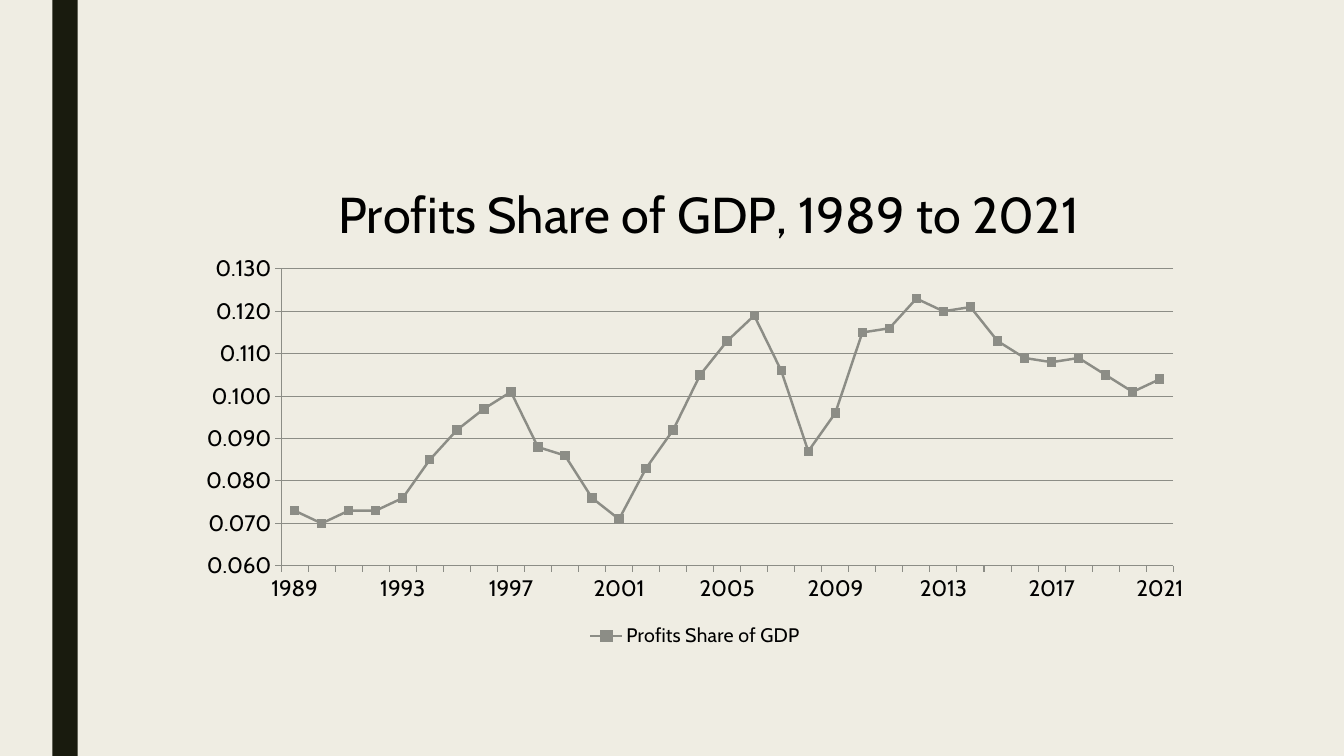
import pptx
import pptx.chart.data
import pptx.dml.color
import pptx.enum.chart
import pptx.enum.shapes
import pptx.util
from lxml import etree
from pptx.util import Inches

COLORS = {"background": "EFEDE3", "bar": "191B0E", "line": "8C8D86", "text": "000000"}
FONT = "Cabin"
TITLE = "Profits Share of GDP, 1989 to 2021"
SERIES_NAME = "Profits Share of GDP"
FIRST_YEAR = 1989
LABEL_STEP = 4
PROFIT_SHARES = [
    0.073, 0.07, 0.073, 0.073, 0.076, 0.085, 0.092, 0.097, 0.101, 0.088, 0.086,
    0.076, 0.071, 0.083, 0.092, 0.105, 0.113, 0.119, 0.106, 0.087, 0.096, 0.115,
    0.116, 0.123, 0.12, 0.121, 0.113, 0.109, 0.108, 0.109, 0.105, 0.101, 0.104,
]


def color(name):
    return pptx.dml.color.RGBColor.from_string(COLORS[name])


def fill_solid(fill, name):
    fill.solid()
    fill.fore_color.rgb = color(name)


def style_font(font, size):
    font.name = FONT
    font.size = pptx.util.Pt(size)
    font.bold = False
    font.color.rgb = color("text")


def style_line(line, width):
    line.color.rgb = color("line")
    line.width = pptx.util.Pt(width)


def add_bar(slide, left, top, width, height):
    shape = slide.shapes.add_shape(
        pptx.enum.shapes.MSO_SHAPE.RECTANGLE,
        Inches(left), Inches(top), Inches(width), Inches(height),
    )
    shape.shadow.inherit = False
    fill_solid(shape.fill, "bar")
    shape.line.fill.background()


def set_layout(element, **settings):
    namespace = pptx.oxml.ns.nsuri("c")
    for old_layout in element.findall(f"{{{namespace}}}layout"):
        element.remove(old_layout)
    layout = etree.Element(f"{{{namespace}}}layout")
    manual = etree.SubElement(layout, f"{{{namespace}}}manualLayout")
    for name, value in settings.items():
        etree.SubElement(manual, f"{{{namespace}}}{name}", val=str(value))
    return layout


def style_axis(axis):
    style_font(axis.tick_labels.font, 16)
    style_line(axis.format.line, 0.75)
    axis.major_tick_mark = pptx.enum.chart.XL_TICK_MARK.OUTSIDE
    axis.minor_tick_mark = pptx.enum.chart.XL_TICK_MARK.NONE


def style_value_axis(axis):
    style_axis(axis)
    axis.minimum_scale = 0.06
    axis.maximum_scale = 0.13
    axis.major_unit = 0.01
    axis.tick_labels.number_format = "0.000"
    axis.tick_labels.number_format_is_linked = False
    axis.has_major_gridlines = True
    style_line(axis.major_gridlines.format.line, 0.75)


def style_series(series):
    series.smooth = False
    style_line(series.format.line, 1.75)
    series.marker.style = pptx.enum.chart.XL_MARKER_STYLE.SQUARE
    series.marker.size = 6
    fill_solid(series.marker.format.fill, "line")
    series.marker.format.line.color.rgb = color("line")


def add_title(chart):
    chart.has_title = True
    run = chart.chart_title.text_frame.paragraphs[0].add_run()
    run.text = TITLE
    style_font(run.font, 36)
    chart.chart_title.include_in_layout = False
    title = chart.chart_title._element
    title.tx.addnext(set_layout(title, xMode="edge", yMode="edge", x=0.14, y=0.06))


def add_legend(chart):
    chart.has_legend = True
    chart.legend.position = pptx.enum.chart.XL_LEGEND_POSITION.BOTTOM
    chart.legend.include_in_layout = False
    style_font(chart.legend.font, 14)


def add_profit_chart(slide, left, top, width, height):
    data = pptx.chart.data.CategoryChartData(number_format="0.000")
    data.categories = [
        "" if index % LABEL_STEP else str(FIRST_YEAR + index)
        for index in range(len(PROFIT_SHARES))
    ]
    data.add_series(SERIES_NAME, PROFIT_SHARES)
    chart = slide.shapes.add_chart(
        pptx.enum.chart.XL_CHART_TYPE.LINE_MARKERS,
        Inches(left), Inches(top), Inches(width), Inches(height), data,
    ).chart
    style_font(chart.font, 10)
    add_title(chart)
    add_legend(chart)
    style_axis(chart.category_axis)
    style_value_axis(chart.value_axis)
    chart.plots[0].vary_by_categories = False
    style_series(chart.plots[0].series[0])
    plot_area = chart._chartSpace.chart.plotArea
    plot_area.insert(0, set_layout(
        plot_area, layoutTarget="inner", xMode="edge", yMode="edge",
        x=0.093, y=0.253, w=0.877, h=0.579,
    ))


def main():
    presentation = pptx.Presentation()
    presentation.slide_width = Inches(13.33)
    presentation.slide_height = Inches(7.5)
    slide = presentation.slides.add_slide(presentation.slide_layouts[6])
    fill_solid(slide.background.fill, "background")
    add_bar(slide, 0.52, 0, 0.25, 7.5)
    add_profit_chart(slide, 1.85, 1.38, 10.09, 5.09)
    presentation.save("out.pptx")


if __name__ == "__main__":
    main()
